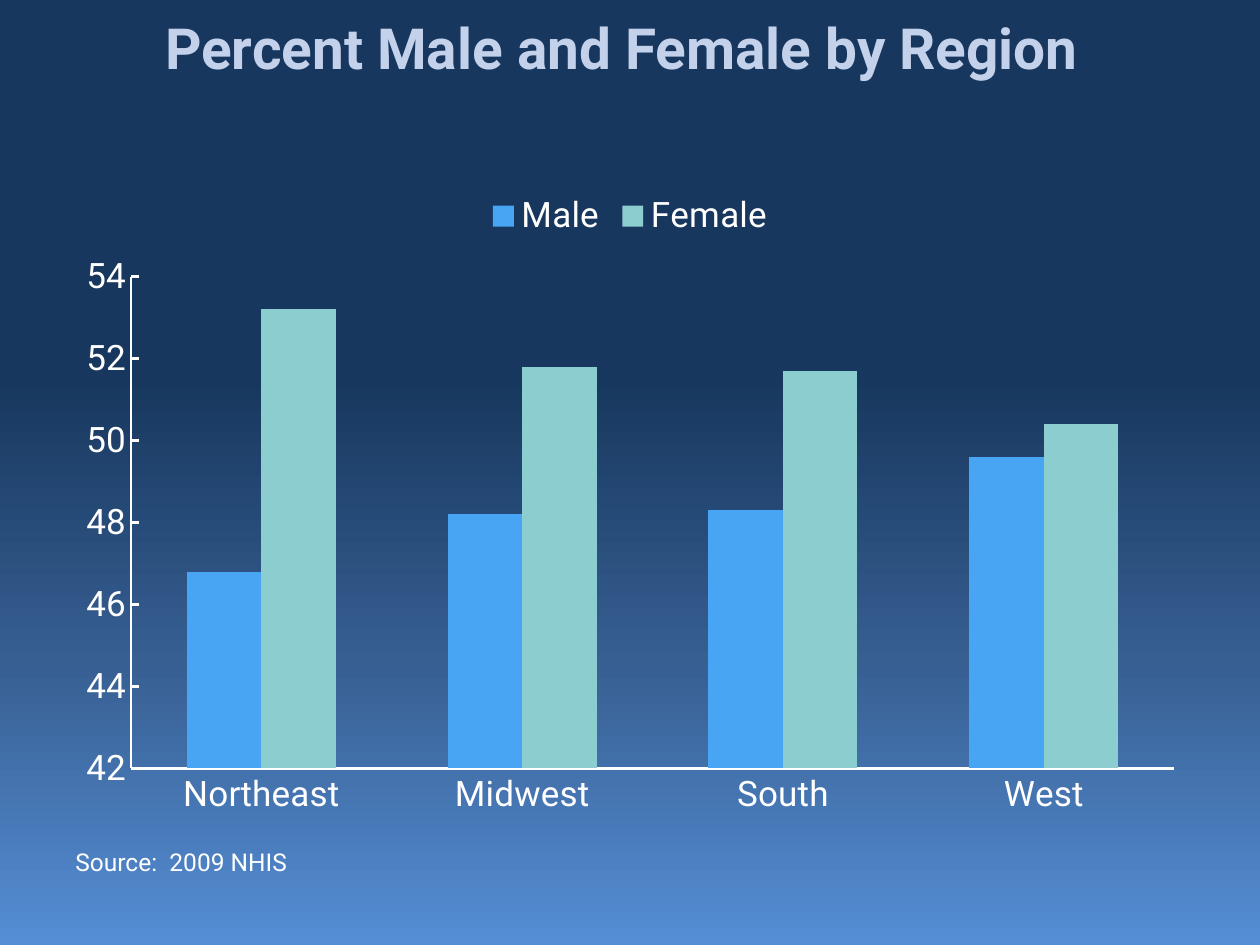
import copy
import pptx
import pptx.util
import pptx.chart.data
import pptx.dml.color
import pptx.enum.chart
import pptx.enum.text
import pptx.oxml
import pptx.oxml.ns

RGBColor = pptx.dml.color.RGBColor
Inches = pptx.util.Inches
Pt = pptx.util.Pt
qn = pptx.oxml.ns.qn

WHITE = RGBColor(0xFF, 0xFF, 0xFF)
PALE_BLUE = RGBColor(0xC4, 0xD1, 0xEB)
NAVY = RGBColor(0x17, 0x37, 0x5E)
STEEL = RGBColor(0x37, 0x5F, 0x92)
SKY = RGBColor(0x55, 0x8E, 0xD5)
MALE_BLUE = RGBColor(0x47, 0xA5, 0xF3)
FEMALE_TEAL = RGBColor(0x8C, 0xCD, 0xCF)
MARGIN = Inches(0.5)

deck = pptx.Presentation()
deck.slide_width = Inches(10)
deck.slide_height = Inches(7.5)
content_width = deck.slide_width - 2 * MARGIN
slide = deck.slides.add_slide(deck.slide_layouts[6])


def style_font(font, size, color=WHITE, bold=False):
    font.name = "Roboto"
    font.size = Pt(size)
    font.color.rgb = color
    font.bold = bold


def add_line_of_text(wording, top, height, size, color, bold):
    box = slide.shapes.add_textbox(MARGIN, Inches(top), content_width, Inches(height))
    frame = box.text_frame
    frame.word_wrap = True
    frame.text = wording
    style_font(frame.paragraphs[0].runs[0].font, size, color, bold)
    return frame


backdrop = slide.background.fill
backdrop.gradient()
backdrop.gradient_angle = 270
stop_list = slide.element.find(".//" + qn("a:gsLst"))
for extra in range(2):
    stop_list.append(copy.deepcopy(stop_list[0]))
shades = [(0, NAVY), (0.4, NAVY), (0.7, STEEL), (1, SKY)]
for stop, (position, shade) in zip(backdrop.gradient_stops, shades):
    stop.position = position
    stop.color.rgb = shade

heading = add_line_of_text("Percent Male and Female by Region", 0, 1.25, 32.4, PALE_BLUE, True)
heading.margin_top = Inches(0.1)
heading.margin_right = Inches(0.23)
heading.paragraphs[0].alignment = pptx.enum.text.PP_ALIGN.CENTER

add_line_of_text("Source:  2009 NHIS", 6.67, 0.25, 14, WHITE, False)

shares = pptx.chart.data.CategoryChartData()
shares.categories = ["Northeast", "Midwest", "South", "West"]
shares.add_series("Male", [46.8, 48.2, 48.3, 49.6])
shares.add_series("Female", [53.2, 51.8, 51.7, 50.4])
chart = slide.shapes.add_chart(
    pptx.enum.chart.XL_CHART_TYPE.COLUMN_CLUSTERED,
    MARGIN, Inches(1.42), content_width, Inches(5.17), shares,
).chart
chart.has_title = False
style_font(chart.font, 20)

chart.has_legend = True
chart.legend.position = pptx.enum.chart.XL_LEGEND_POSITION.TOP
chart.legend.include_in_layout = False
style_font(chart.legend.font, 20)

columns = chart.plots[0]
columns.gap_width = 150
columns.overlap = 0
columns.vary_by_categories = False
for series, color in zip(columns.series, [MALE_BLUE, FEMALE_TEAL]):
    series.format.fill.solid()
    series.format.fill.fore_color.rgb = color
    series.invert_if_negative = False

tick_mark = pptx.enum.chart.XL_TICK_MARK
for axis, tick in [(chart.category_axis, tick_mark.NONE), (chart.value_axis, tick_mark.INSIDE)]:
    axis.major_tick_mark = tick
    axis.minor_tick_mark = tick_mark.NONE
    axis.has_major_gridlines = False
    axis.format.line.color.rgb = WHITE
    axis.format.line.width = Pt(1.5)
    style_font(axis.tick_labels.font, 20)

percent = chart.value_axis
percent.minimum_scale = 42
percent.maximum_scale = 54
percent.major_unit = 2
percent.tick_labels.number_format = "0"
percent.tick_labels.number_format_is_linked = False

plot_area = chart.element.find(".//" + qn("c:plotArea"))
for old_layout in plot_area.findall(qn("c:layout")):
    plot_area.remove(old_layout)
plot_area.insert(0, pptx.oxml.parse_xml(
    '<c:layout xmlns:c="http://schemas.openxmlformats.org/drawingml/2006/chart">'
    '<c:manualLayout><c:layoutTarget val="inner"/>'
    '<c:xMode val="edge"/><c:yMode val="edge"/>'
    '<c:x val="0.06"/><c:y val="0.15"/><c:w val="0.92"/><c:h val="0.755"/>'
    '</c:manualLayout></c:layout>'
))

deck.save("out.pptx")
